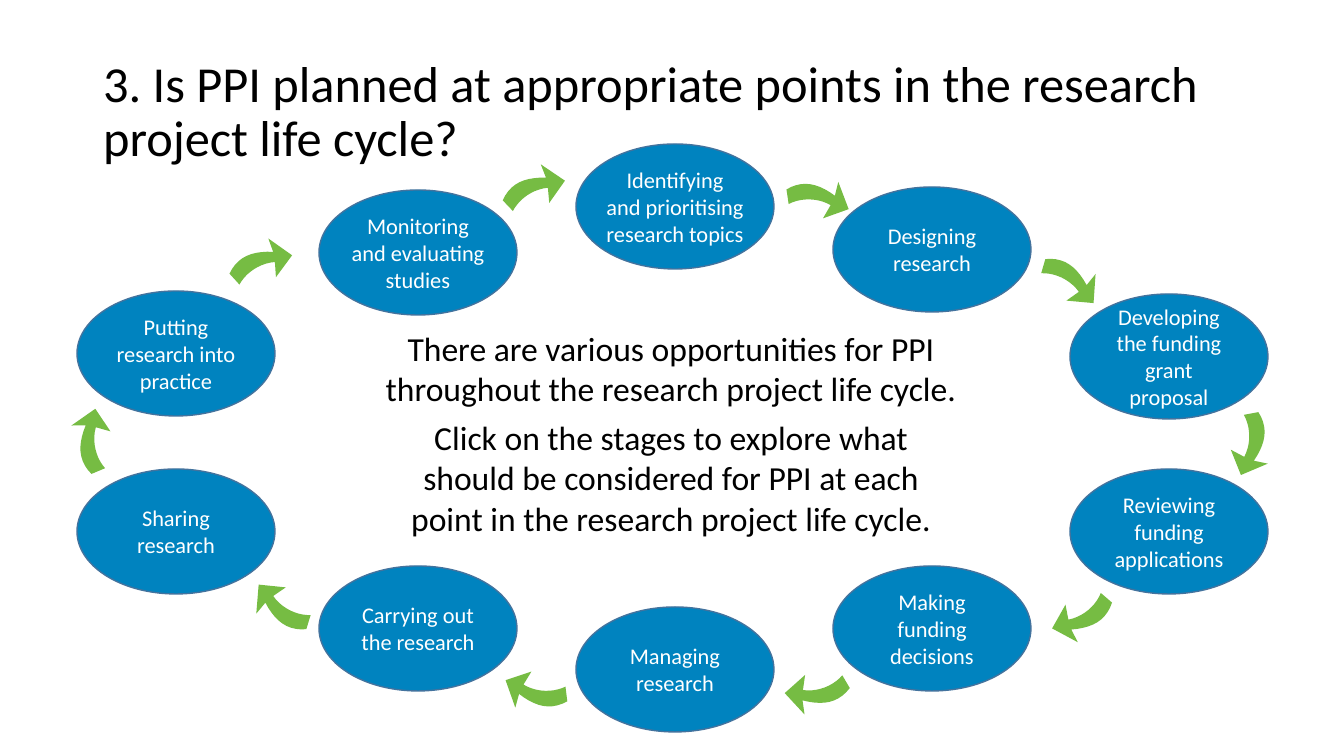
from pptx import Presentation
from pptx import util as u
from pptx.dml.color import RGBColor
from pptx.enum import shapes, text

PX = 914400 / 100.8
COLORS = {"stage": "0083BF", "rim": "43739E", "arrow": "76BC43",
          "light": "FFFFFF", "dark": "000000"}
FONT = "Calibri"
STAGE_SIZE = (198, 125)
ARROW_SIZE = 53
ARROW_TAIL = (7, 0)
ARROW_OUTER = [(26, 2), (36, 14), (42, 34)]
ARROW_HEAD = [(53, 25), (45, 53), (19, 45), (33, 39)]
ARROW_INNER = [(27, 25), (13, 15), (0, 13)]

# Each stage: wording, left, top, side inset
STAGES = [
    ("Identifying\nand prioritising research topics", 576, 144, 0),
    ("Designing research", 833, 187, 10),
    ("Developing the funding grant proposal", 1070, 294, 10),
    ("Reviewing funding applications", 1070, 469, 10),
    ("Making funding decisions", 833, 566, 10),
    ("Managing research", 576, 607, 10),
    ("Carrying out the research", 319, 566, 10),
    ("Sharing research", 77, 469, 4),
    ("Putting research into practice", 77, 291, 4),
    ("Monitoring and evaluating studies", 319, 190, 0),
]
# Each arrow: centre x, centre y, rotation
ARROWS = [
    (818, 199, 323.2), (1070, 281, 348), (1250, 444, 51.1),
    (1082, 616, 102.3), (817, 691, 121.2), (536, 691, 144.5),
    (282, 607, 168.7), (93, 441, 219), (261, 264, 289.3), (534, 190, 288.1),
]
MESSAGES = [
    ("There are various opportunities for PPI throughout the research "
     "project life cycle.", (367, 323, 608, 111)),
    ("Click on the stages to explore what should be considered for PPI at "
     "each point in the research project life cycle.", (387, 412, 568, 132)),
]


def px(*lengths):
    """Turn lengths in px into EMU."""
    return [u.Emu(round(length * PX)) for length in lengths]


def color(name):
    """Look up a colour by its role."""
    return RGBColor.from_string(COLORS[name])


def write(frame, wording, size, ink, align):
    """Fill a text frame with one paragraph per line of wording."""
    frame.text = wording
    frame.word_wrap = True
    for paragraph in frame.paragraphs:
        paragraph.alignment = align
        paragraph.font.name = FONT
        paragraph.font.size = u.Pt(size)
        paragraph.font.color.rgb = color(ink)


def curve(start, controls, steps=10):
    """Return points along a cubic curve."""
    weights = [((1 - t) ** 3, 3 * t * (1 - t) ** 2, 3 * t * t * (1 - t), t ** 3)
               for t in (step / steps for step in range(1, steps + 1))]
    return [tuple(sum(w * point[axis] for w, point in zip(row, [start, *controls]))
                  for axis in (0, 1)) for row in weights]


def add_heading(slide, box):
    """Place the slide title in its box."""
    heading = slide.shapes.title
    heading.left, heading.top, heading.width, heading.height = px(*box)
    frame = heading.text_frame
    write(frame, "3. Is PPI planned at appropriate points in the research "
          "project life cycle?", 36, "dark", text.PP_ALIGN.LEFT)
    frame.auto_size = text.MSO_AUTO_SIZE.NONE
    frame.vertical_anchor = text.MSO_ANCHOR.MIDDLE
    frame.paragraphs[0].line_spacing = 0.9


def add_stage(slide, wording, box, inset):
    """Draw one stage of the life cycle."""
    stage = slide.shapes.add_shape(shapes.MSO_SHAPE.OVAL, *px(*box))
    stage.shadow.inherit = False
    stage.fill.solid()
    stage.fill.fore_color.rgb = color("stage")
    stage.line.color.rgb = color("rim")
    stage.line.width = u.Pt(1)
    frame = stage.text_frame
    frame.margin_left = frame.margin_right = px(inset)[0]
    frame.vertical_anchor = text.MSO_ANCHOR.MIDDLE
    write(frame, wording, 16, "light", text.PP_ALIGN.CENTER)


def add_arrow(slide, center_x, center_y, rotation):
    """Draw one curved arrow turned about its centre."""
    outer = curve(ARROW_TAIL, ARROW_OUTER)
    inner = curve(ARROW_HEAD[-1], ARROW_INNER)
    builder = slide.shapes.build_freeform(*px(*ARROW_TAIL))
    builder.add_line_segments([px(*point) for point in outer + ARROW_HEAD + inner])
    half = ARROW_SIZE / 2
    arrow = builder.convert_to_shape(*px(center_x - half, center_y - half))
    arrow.rotation = rotation
    arrow.shadow.inherit = False
    arrow.fill.solid()
    arrow.fill.fore_color.rgb = color("arrow")
    arrow.line.fill.background()


def add_cycle(slide, left, top):
    """Draw the ring of stages and arrows from a top left corner."""
    for center_x, center_y, rotation in ARROWS:
        add_arrow(slide, left + center_x, top + center_y, rotation)
    for wording, x, y, inset in STAGES:
        add_stage(slide, wording, (left + x, top + y, *STAGE_SIZE), inset)


def add_message(slide, wording, box):
    """Place one centred message inside the ring."""
    message = slide.shapes.add_textbox(*px(*box))
    write(message.text_frame, wording, 24, "dark", text.PP_ALIGN.CENTER)


def main():
    """Build and save the slide."""
    deck = Presentation()
    deck.slide_width, deck.slide_height = px(1344, 756)
    slide = deck.slides.add_slide(deck.slide_layouts[5])
    add_heading(slide, (93, 40, 1159, 146))
    add_cycle(slide, 0, 0)
    for wording, box in MESSAGES:
        add_message(slide, wording, box)
    deck.save("out.pptx")


if __name__ == "__main__":
    main()
